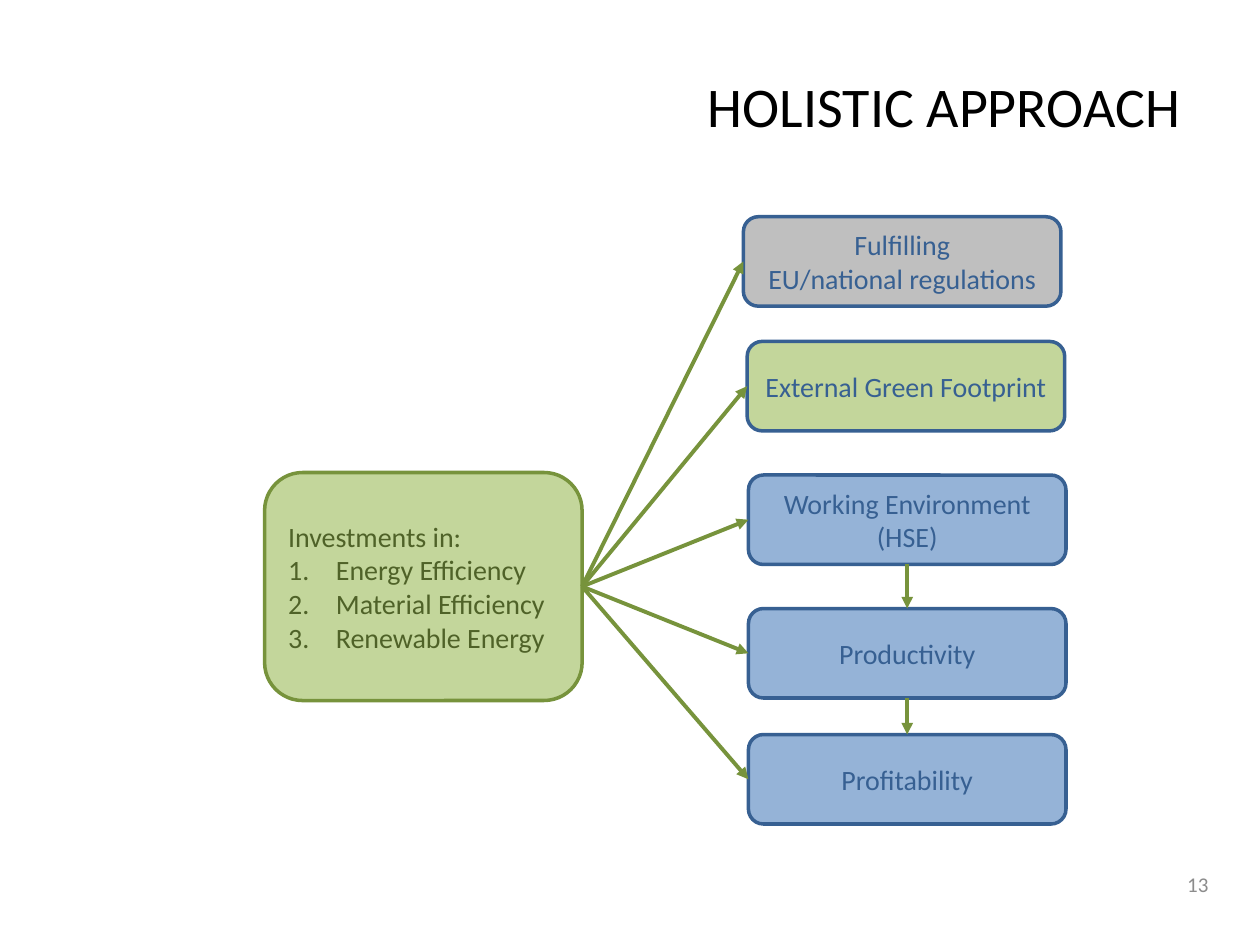
from pptx import Presentation
from pptx.dml.color import RGBColor
from pptx.enum import shapes, text
from pptx.oxml.ns import qn
from pptx.util import Inches, Pt

BLACK = RGBColor(0x00, 0x00, 0x00)
NUMBER_GRAY = RGBColor(0x8C, 0x8C, 0x8C)
GRAY = RGBColor(0xBF, 0xBF, 0xBF)
BLUE = RGBColor(0x95, 0xB3, 0xD7)
DARK_BLUE = RGBColor(0x37, 0x60, 0x92)
GREEN = RGBColor(0xC3, 0xD6, 0x9B)
MID_GREEN = RGBColor(0x77, 0x93, 0x3C)
DARK_GREEN = RGBColor(0x4F, 0x62, 0x28)
TOP, LEFT, BOTTOM, RIGHT = range(4)

# Content
TITLE = "HOLISTIC APPROACH"
PAGE = "13"
HEADING = "Investments in:"
INVESTMENTS = ["Energy Efficiency", "Material Efficiency", "Renewable Energy"]
BENEFITS = [  # lines, left, top, fill
    (["Fulfilling", "EU/national regulations"], 5.9, 1.72, GRAY),
    (["External Green Footprint"], 5.93, 2.71, GREEN),
    (["Working Environment (HSE)"], 5.94, 3.77, BLUE),
    (["Productivity"], 5.94, 4.83, BLUE),
    (["Profitability"], 5.94, 5.83, BLUE),
]
CHAIN = [(2, 3), (3, 4)]  # benefits that lead to one another
BOX_W, BOX_H = 2.52, 0.71


def write(sp, lines, size=16, color=BLACK, align=text.PP_ALIGN.LEFT):
    tf = sp.text_frame
    tf.word_wrap = True
    tf.auto_size = text.MSO_AUTO_SIZE.NONE
    tf.vertical_anchor = text.MSO_ANCHOR.MIDDLE
    for i, line in enumerate(lines):
        p = tf.paragraphs[0] if i == 0 else tf.add_paragraph()
        p.alignment = align
        r = p.add_run()
        r.text = line
        r.font.name, r.font.size = "Calibri", Pt(size)
        r.font.color.rgb = color


def number(p):
    pPr = p._p.get_or_add_pPr()
    pPr.set("marL", str(Inches(0.38)))
    pPr.set("indent", str(-Inches(0.38)))
    bullet = pPr.makeelement(qn("a:buAutoNum"), {"type": "arabicPeriod"})
    pPr.append(bullet)


def place(sp, x, y, w, h):
    sp.left, sp.top, sp.width, sp.height = map(Inches, (x, y, w, h))


def add_box(s, x, y, w, h, fill, line):
    sp = s.shapes.add_shape(shapes.MSO_SHAPE.ROUNDED_RECTANGLE,
                            *map(Inches, (x, y, w, h)))
    sp.shadow.inherit = False
    sp.fill.solid()
    sp.fill.fore_color.rgb = fill
    sp.line.color.rgb = line
    sp.line.width = Pt(2)
    return sp


def add_arrow(s, start, start_side, end, end_side):
    c = s.shapes.add_connector(shapes.MSO_CONNECTOR.STRAIGHT, 0, 0, 0, 0)
    c.begin_connect(start, start_side)
    c.end_connect(end, end_side)
    c.line.color.rgb = MID_GREEN
    c.line.width = Pt(2.25)
    ln = c.line._get_or_add_ln()
    ln.append(ln.makeelement(qn("a:tailEnd"), {"type": "triangle"}))
    spPr = c._element.spPr
    spPr.append(spPr.makeelement(qn("a:effectLst"), {}))


def main():
    prs = Presentation()
    prs.slide_width, prs.slide_height = Inches(10), Inches(7.5)
    s = prs.slides.add_slide(prs.slide_layouts[5])

    # Title and page number
    place(s.shapes.title, 5.31, 0.21, 4.16, 1.25)
    write(s.shapes.title, [TITLE], size=32, align=text.PP_ALIGN.RIGHT)
    page = s.shapes.add_textbox(*map(Inches, (7.36, 6.82, 2.33, 0.4)))
    write(page, [PAGE], size=12, color=NUMBER_GRAY, align=text.PP_ALIGN.RIGHT)

    # Investments
    source = add_box(s, 2.1, 3.75, BOX_W, 1.81, GREEN, MID_GREEN)
    write(source, [HEADING] + INVESTMENTS, color=DARK_GREEN)
    for p in source.text_frame.paragraphs[1:]:
        number(p)

    # Benefits
    boxes = []
    for lines, x, y, fill in BENEFITS:
        sp = add_box(s, x, y, BOX_W, BOX_H, fill, DARK_BLUE)
        write(sp, lines, color=DARK_BLUE, align=text.PP_ALIGN.CENTER)
        boxes.append(sp)

    # Arrows
    for sp in boxes:
        add_arrow(s, source, RIGHT, sp, LEFT)
    for a, b in CHAIN:
        add_arrow(s, boxes[a], BOTTOM, boxes[b], TOP)

    prs.save("out.pptx")


if __name__ == "__main__":
    main()
